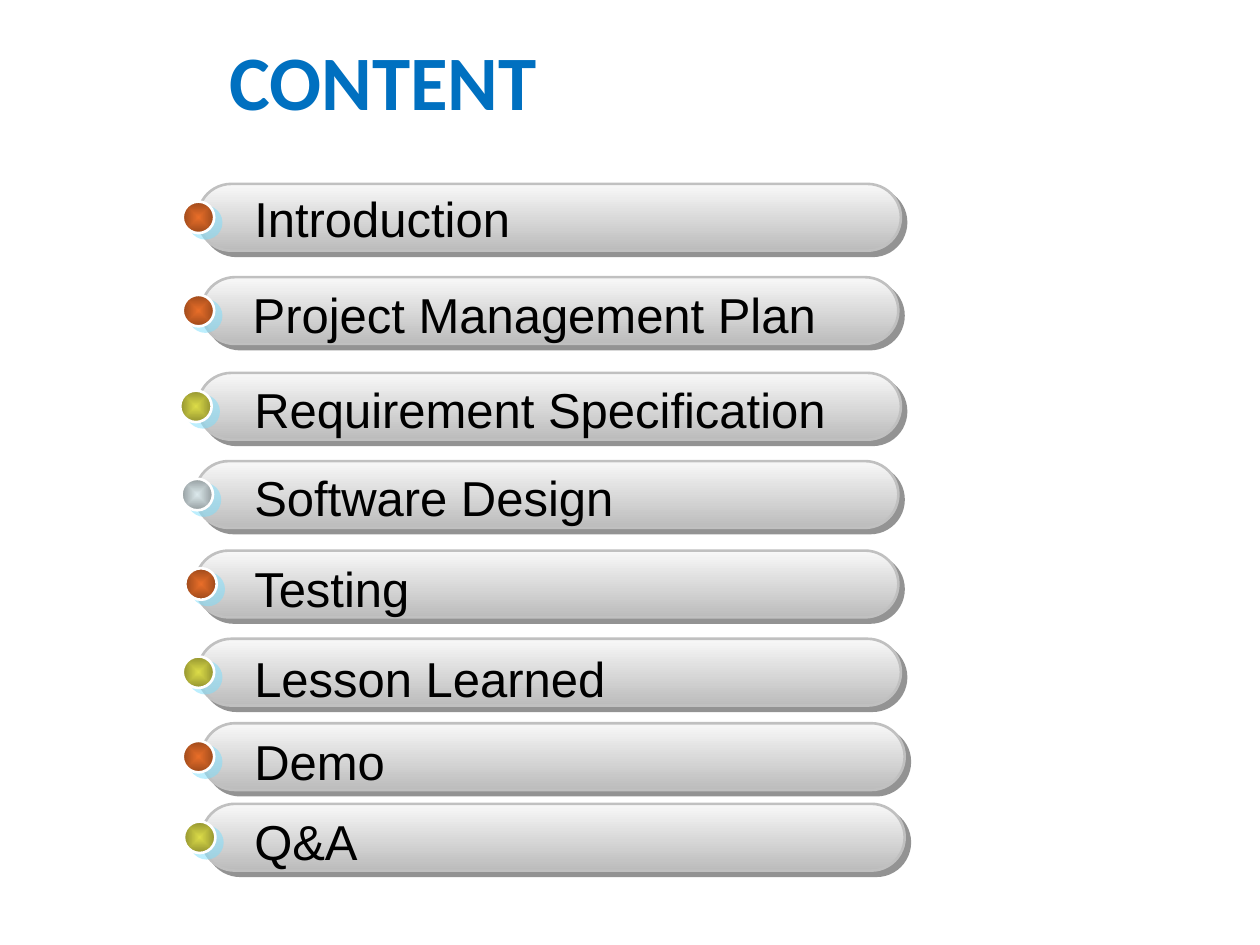
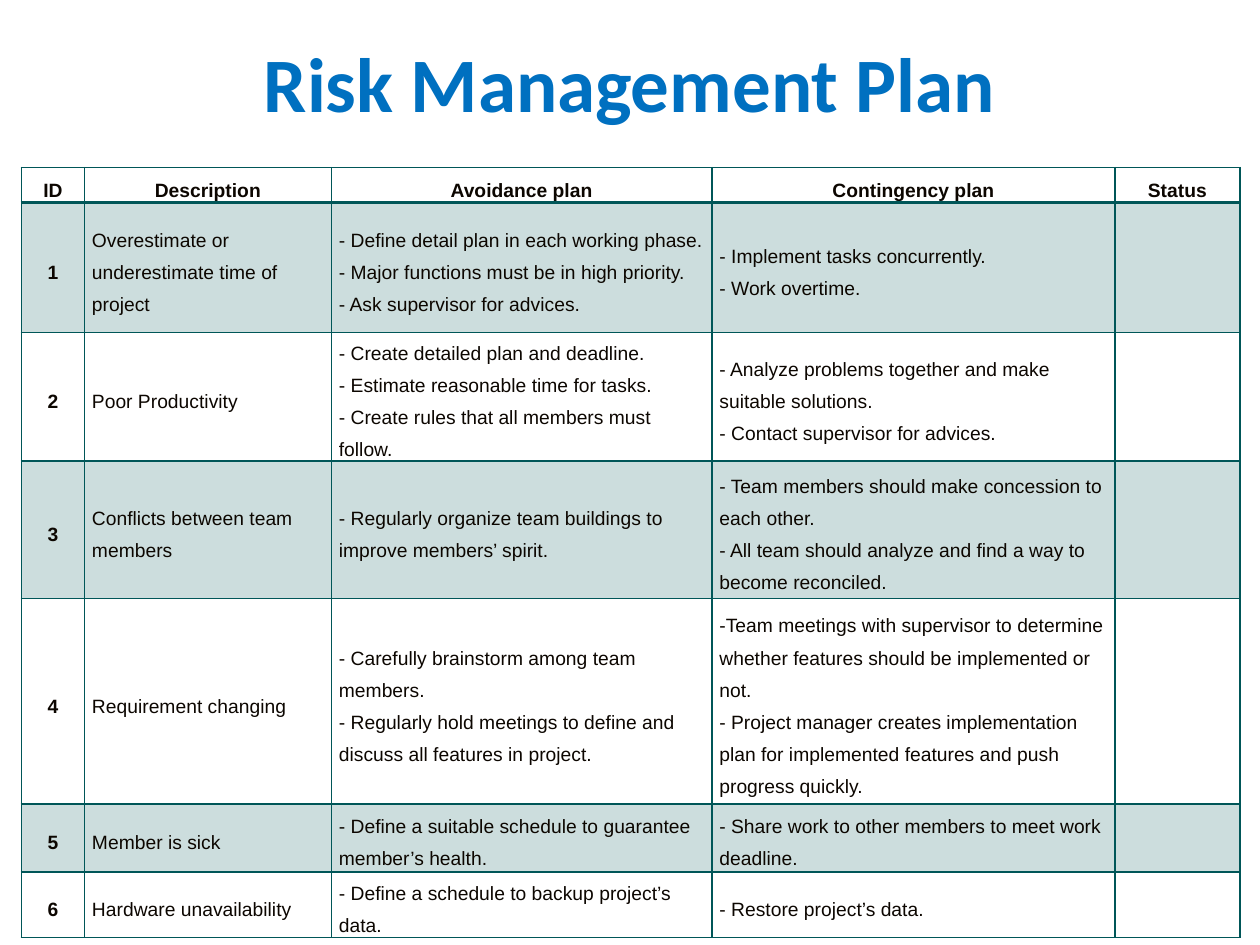
from dataclasses import dataclass

from pptx import Presentation
from pptx.dml.color import RGBColor
from pptx.enum.shapes import MSO_SHAPE as Preset
from pptx.enum.text import MSO_ANCHOR as Anchor, MSO_AUTO_SIZE as AutoSize, PP_ALIGN as Align
from pptx.oxml import parse_xml
from pptx.oxml.ns import nsdecls, qn
from pptx.util import Inches, Pt


@dataclass(frozen=True)
class Theme:
    title: str = "0070C0"
    black: str = "000000"
    white: str = "FFFFFF"
    bar: str = "F8F8F8"
    bar_line: str = "C0C0C0"
    bar_shadow: str = "292929"
    dot_shadow: str = "7BDEFD"
    orange: str = "E96E29"
    lime: str = "DCDC48"
    silver: str = "DCE9EC"
    table: str = "005658"
    table_text: str = "0C0600"
    heading_font: str = "Calibri"
    body_font: str = "Arial"
    title_size: int = 44
    agenda_size: int = 28
    table_size: int = 11
    table_line_height: float = 18.3


THEME = Theme()
BAR_HEIGHT = 0.53
DOT_SIZE = 0.25


@dataclass(frozen=True)
class AgendaItem:
    text: str
    bar_left: float
    bar_top: float
    dot_left: float
    dot_color: str
    label_top: float
    label_width: float
    bar_width: float = 5.58
    label_left: float = 1.92
    align: Align = Align.JUSTIFY


AGENDA = [
    AgendaItem("Introduction", 1.57, 1.46, 1.45, THEME.orange, 1.45, 2.43, align=Align.LEFT),
    AgendaItem("Project Management Plan", 1.6, 2.2, 1.45, THEME.orange, 2.21, 4.82,
               bar_width=5.53, label_left=1.83, align=Align.CENTER),
    AgendaItem("Requirement Specification", 1.57, 2.96, 1.43, THEME.lime, 2.96, 5),
    AgendaItem("Software Design", 1.55, 3.66, 1.44, THEME.silver, 3.66, 3.26),
    AgendaItem("Testing", 1.55, 4.37, 1.47, THEME.orange, 4.38, 1.62),
    AgendaItem("Lesson Learned", 1.57, 5.07, 1.45, THEME.lime, 5.1, 3.27),
    AgendaItem("Demo", 1.6, 5.74, 1.45, THEME.orange, 5.76, 1.46),
    AgendaItem("Q&A", 1.6, 6.38, 1.46, THEME.lime, 6.39, 1.2),
]

RISK_COLUMNS = {"ID": 0.5, "Description": 1.96, "Avoidance plan": 3.02,
                "Contingency plan": 3.2, "Status": 0.99}
RISK_ROW_HEIGHTS = [0.28, 1.03, 1.02, 1.09, 1.63, 0.54, 0.52]
RISKS = [
    ("Overestimate or underestimate time of project",
     ["- Define detail plan in each working phase.",
      "- Major functions must be in high priority.",
      "- Ask supervisor for advices."],
     ["- Implement tasks concurrently.", "- Work overtime."]),
    ("Poor Productivity",
     ["- Create detailed plan and deadline.",
      "- Estimate reasonable time for tasks.",
      "- Create rules that all members must follow."],
     ["- Analyze problems together and make suitable solutions.",
      "- Contact supervisor for advices."]),
    ("Conflicts between team members",
     ["- Regularly organize team buildings to improve members’ spirit."],
     ["- Team members should make concession to each other.",
      "- All team should analyze and find a way to become reconciled."]),
    ("Requirement changing",
     ["- Carefully brainstorm among team members.",
      "- Regularly hold meetings to define and discuss all features in project."],
     ["-Team meetings with supervisor to determine whether features should be implemented or not.",
      "- Project manager creates implementation plan for implemented features and push progress quickly."]),
    ("Member is sick",
     ["- Define a suitable schedule to guarantee member’s health."],
     ["- Share work to other members to meet work deadline."]),
    ("Hardware unavailability",
     ["- Define a schedule to backup project’s data."],
     ["- Restore project’s data."]),
]


def rgb(color):
    return RGBColor.from_string(color)


def add_run(paragraph, text, font, size, color, bold=False):
    run = paragraph.add_run()
    run.text = text
    run.font.name = font
    run.font.size = Pt(size)
    run.font.bold = bold
    run.font.color.rgb = rgb(color)


def add_text_box(slide, left, top, width, height, align):
    box = slide.shapes.add_textbox(Inches(left), Inches(top), Inches(width), Inches(height))
    box.text_frame.word_wrap = True
    paragraph = box.text_frame.paragraphs[0]
    paragraph.alignment = align
    return box.text_frame, paragraph


def add_title(slide, text, left, top, width, height):
    frame, paragraph = add_text_box(slide, left, top, width, height, Align.CENTER)
    frame.vertical_anchor = Anchor.MIDDLE
    add_run(paragraph, text, THEME.heading_font, THEME.title_size, THEME.title, bold=True)


def set_gradient(shape, color, shade, direction):
    shape.fill.solid()
    solid = shape._element.spPr.find(qn("a:solidFill"))
    gradient = parse_xml(
        f'<a:gradFill {nsdecls("a")} rotWithShape="1"><a:gsLst>'
        f'<a:gs pos="0"><a:srgbClr val="{color}"/></a:gs>'
        f'<a:gs pos="100000"><a:srgbClr val="{color}">'
        f'<a:gamma/><a:shade val="{shade * 1000}"/><a:invGamma/></a:srgbClr></a:gs>'
        f'</a:gsLst>{direction}</a:gradFill>')
    solid.getparent().replace(solid, gradient)


def set_shadow(shape, color, distance, angle):
    shape.shadow.inherit = False
    shape._element.spPr.find(qn("a:effectLst")).append(parse_xml(
        f'<a:outerShdw {nsdecls("a")} blurRad="0" dist="{Pt(distance)}" dir="{angle * 60000}" '
        f'algn="ctr" rotWithShape="0"><a:srgbClr val="{color}"><a:alpha val="50000"/>'
        f'</a:srgbClr></a:outerShdw>'))


def add_outlined_shape(slide, preset, left, top, width, height, line_color):
    shape = slide.shapes.add_shape(preset, Inches(left), Inches(top), Inches(width), Inches(height))
    shape.line.color.rgb = rgb(line_color)
    shape.line.width = Pt(1.5)
    return shape


def add_bar(slide, item):
    bar = add_outlined_shape(slide, Preset.ROUNDED_RECTANGLE, item.bar_left, item.bar_top,
                             item.bar_width, BAR_HEIGHT, THEME.bar_line)
    bar.adjustments[0] = 0.5
    set_gradient(bar, THEME.bar, 76, '<a:lin ang="5400000" scaled="1"/>')
    set_shadow(bar, THEME.bar_shadow, 4.2, 45)


def add_dot(slide, item):
    top = item.bar_top + (BAR_HEIGHT - DOT_SIZE) / 2
    dot = add_outlined_shape(slide, Preset.OVAL, item.dot_left, top, DOT_SIZE, DOT_SIZE, THEME.white)
    set_gradient(dot, item.dot_color, 67,
                 '<a:path path="shape"><a:fillToRect l="50000" t="50000" r="50000" b="50000"/></a:path>')
    set_shadow(dot, THEME.dot_shadow, 5, 37)


def add_label(slide, item):
    frame, paragraph = add_text_box(slide, item.label_left, item.label_top,
                                    item.label_width, 0.57, item.align)
    frame.auto_size = AutoSize.SHAPE_TO_FIT_TEXT
    add_run(paragraph, item.text, THEME.body_font, THEME.agenda_size, THEME.black)


def set_borders(cell, bottom_width):
    properties = cell._tc.get_or_add_tcPr()
    for side, width in (("L", 1), ("R", 1), ("T", 1), ("B", bottom_width)):
        properties.append(parse_xml(
            f'<a:ln{side} {nsdecls("a")} w="{Pt(width)}"><a:solidFill>'
            f'<a:srgbClr val="{THEME.table}"/></a:solidFill></a:ln{side}>'))


def set_cell_fill(cell, shaded):
    if not shaded:
        cell.fill.background()
        return
    cell.fill.solid()
    cell.fill.fore_color.rgb = rgb(THEME.table)
    color = cell._tc.tcPr.find(qn("a:solidFill")).find(qn("a:srgbClr"))
    color.append(parse_xml(f'<a:alpha {nsdecls("a")} val="20000"/>'))


def fill_cell(cell, lines, centered, bottom_width, shaded):
    set_borders(cell, bottom_width)
    set_cell_fill(cell, shaded)
    cell.vertical_anchor = Anchor.MIDDLE
    cell.margin_left = cell.margin_right = Inches(0.06)
    cell.margin_top = cell.margin_bottom = 0
    frame = cell.text_frame
    for index, line in enumerate(lines):
        paragraph = frame.add_paragraph() if index else frame.paragraphs[0]
        paragraph.alignment = Align.CENTER if centered else Align.LEFT
        paragraph.line_spacing = Pt(THEME.table_line_height)
        add_run(paragraph, line, THEME.body_font, THEME.table_size, THEME.table_text, bold=centered)


def add_risk_table(slide):
    rows = [[[heading] for heading in RISK_COLUMNS]]
    for number, (description, avoidance, contingency) in enumerate(RISKS, 1):
        rows.append([[str(number)], [description], avoidance, contingency, []])
    table = slide.shapes.add_table(len(rows), len(RISK_COLUMNS), Inches(0.17), Inches(1.33),
                                   Inches(sum(RISK_COLUMNS.values())),
                                   Inches(sum(RISK_ROW_HEIGHTS))).table
    table.first_row = table.horz_banding = False
    for column, width in zip(table.columns, RISK_COLUMNS.values()):
        column.width = Inches(width)
    for row_index, cells in enumerate(rows):
        table.rows[row_index].height = Inches(RISK_ROW_HEIGHTS[row_index])
        is_header = row_index == 0
        for column_index, lines in enumerate(cells):
            fill_cell(table.cell(row_index, column_index), lines,
                      centered=is_header or column_index == 0,
                      bottom_width=2 if is_header else 1,
                      shaded=row_index % 2 == 1)


def add_blank_slide(presentation):
    return presentation.slides.add_slide(presentation.slide_layouts[6])


def build_content_slide(presentation):
    slide = add_blank_slide(presentation)
    add_title(slide, "CONTENT", 1, 0.3, 4.08, 0.67)
    for add_part in (add_bar, add_dot, add_label):
        for item in AGENDA:
            add_part(slide, item)


def build_risk_slide(presentation):
    slide = add_blank_slide(presentation)
    add_title(slide, "Risk Management Plan", 0.5, 0.3, 9, 0.7)
    add_risk_table(slide)


def main():
    presentation = Presentation()
    presentation.slide_width = Inches(10)
    presentation.slide_height = Inches(7.5)
    build_content_slide(presentation)
    build_risk_slide(presentation)
    presentation.save("out.pptx")


if __name__ == "__main__":
    main()
